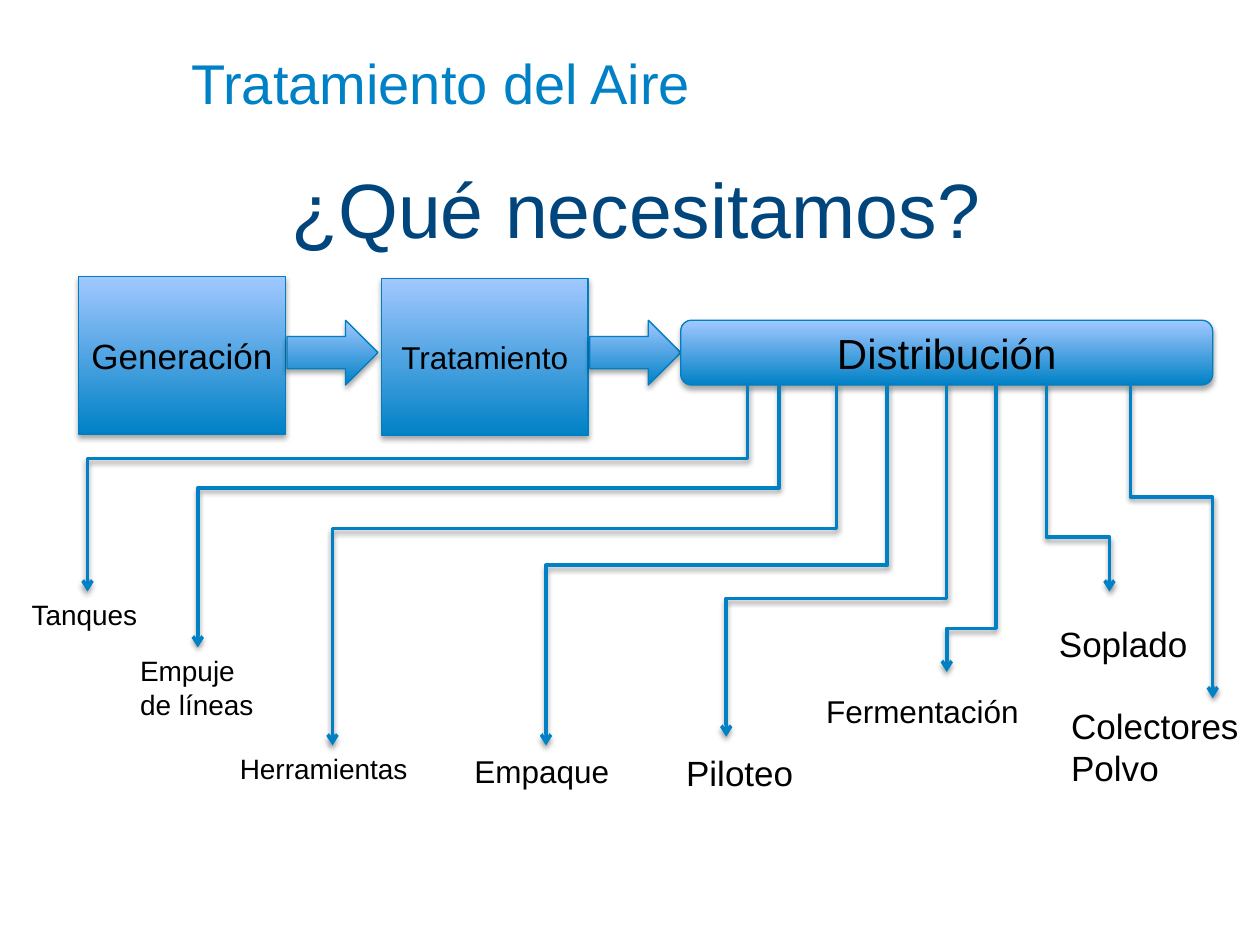
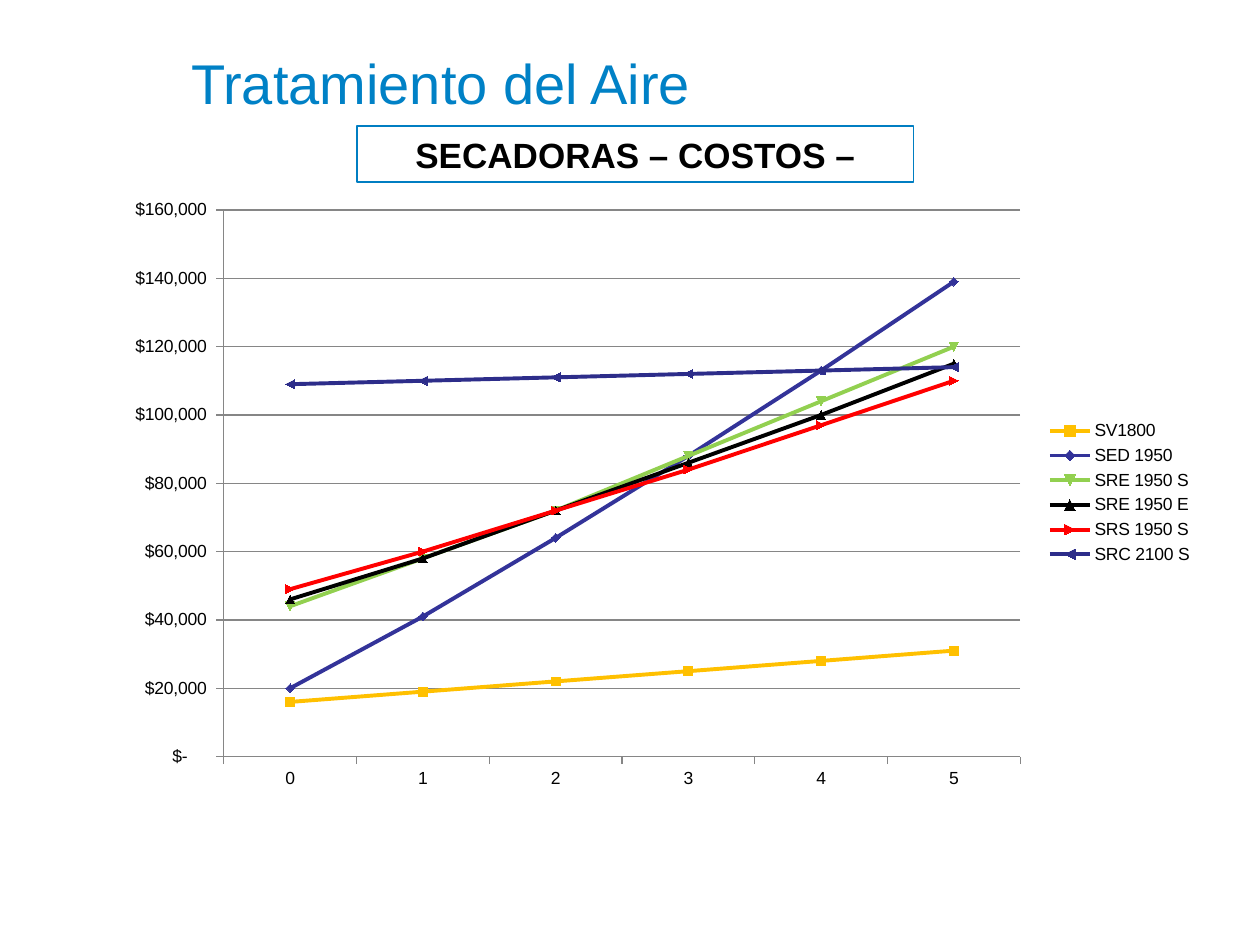
from lxml.etree import SubElement
from pptx import Presentation
from pptx.chart.data import CategoryChartData
from pptx.dml.color import RGBColor
from pptx.enum.chart import XL_CHART_TYPE, XL_LEGEND_POSITION, XL_MARKER_STYLE, XL_TICK_MARK
from pptx.enum.shapes import MSO_CONNECTOR, MSO_SHAPE
from pptx.enum.text import MSO_ANCHOR, PP_ALIGN
from pptx.oxml.ns import qn
from pptx.util import Pt

FONT = "Arial"
BLUE, EDGE, LIGHT, NAVY = "0081C6", "007EC2", "A2C8FF", "00457C"
BLACK, WHITE, GRAY = "000000", "FFFFFF", "868686"
TITLE = "Tratamiento del Aire"
MONEY = '_("$"* #,##0_);_("$"* \\(#,##0\\);_("$"* "-"??_);_(@_)'

# Each outlet: label, size, label box (x, y, width), pipe (start x, bend y, end x, end y)
OUTLETS = [
    ("Tanques", 16, (11, 118, 79), (427, 42, 50, 118)),
    ("Empuje de líneas", 16, (73, 150, 79), (445, 59, 113, 150)),
    ("Herramientas", 16, (130, 206, 122), (478, 82, 190, 206)),
    ("Empaque", 18, (264, 206, 96), (507, 103, 312, 206)),
    ("Piloteo", 20, (385, 206, 102), (541, 122, 415, 201)),
    ("Fermentación", 18, (465, 172, 133), (569, 139, 541, 164)),
    ("Soplado", 20, (598, 132, 120), (598, 87, 634, 118)),
    ("Colectores Polvo", 20, (605, 179, 114), (646, 64, 693, 179)),
]
COSTS = [
    ("SV1800", "FFC000", (16, 19, 22, 25, 28, 31)),
    ("SED 1950", "333399", (20, 41, 64, 88, 113, 139)),
    ("SRE 1950 S", "92D050", (44, 58, 72, 88, 104, 120)),
    ("SRE 1950 E", BLACK, (46, 58, 72, 86, 100, 115)),
    ("SRS 1950 S", "FF0000", (49, 60, 72, 84, 97, 110)),
    ("SRC 2100 S", "2D2D8A", (109, 110, 111, 112, 113, 114)),
]


def rgb(code):
    """Turn a hex string into a colour."""
    return RGBColor.from_string(code)


def points(*sizes):
    """Turn numbers into lengths in points."""
    return [Pt(size) for size in sizes]


def write(frame, text, size, color=BLACK, align=PP_ALIGN.LEFT, bold=False):
    """Put one formatted paragraph in a text frame."""
    frame.text = text
    frame.word_wrap = True
    para = frame.paragraphs[0]
    para.alignment = align
    font = para.runs[0].font
    font.name, font.size, font.bold = FONT, Pt(size), bold
    font.color.rgb = rgb(color)


def label(slide, box, text, size, **style):
    """Add a text box."""
    frame = slide.shapes.add_textbox(*points(*box)).text_frame
    frame.margin_right = 0
    write(frame, text, size, **style)


def shade(effects, alpha):
    """Add a soft shadow that falls straight down."""
    drop = SubElement(effects, qn("a:outerShdw"), blurRad=str(Pt(3.1)), dist=str(Pt(1.8)),
                      dir="5400000", rotWithShape="0")
    color = SubElement(drop, qn("a:srgbClr"), val=BLACK)
    SubElement(color, qn("a:alpha"), val=str(alpha * 1000))


def block(slide, kind, box, text="", size=18):
    """Add a shaded blue shape with an optional caption."""
    shape = slide.shapes.add_shape(kind, *points(*box))
    shape.fill.gradient()
    shape.fill.gradient_angle = 90
    for stop, color in zip(shape.fill.gradient_stops, (BLUE, LIGHT)):
        stop.color.rgb = rgb(color)
    shape.line.color.rgb = rgb(EDGE)
    shape.line.width = Pt(0.75)
    shape.shadow.inherit = False
    shade(shape._element.spPr.find(qn("a:effectLst")), 35)
    if text:
        frame = shape.text_frame
        frame.margin_left = frame.margin_right = 0
        write(frame, text, size, align=PP_ALIGN.CENTER)


def pipe(slide, start, bend, end):
    """Add an elbow arrow that leaves and arrives vertically."""
    (x1, y1), (x2, y2) = start, end
    tall, wide = y2 - y1, abs(x2 - x1)
    mid_x, mid_y = (x1 + x2) / 2, (y1 + y2) / 2
    side = 1 if x2 < x1 else -1
    line = slide.shapes.add_connector(
        MSO_CONNECTOR.ELBOW,
        *points(mid_x - side * tall / 2, mid_y - wide / 2,
                mid_x + side * tall / 2, mid_y + wide / 2))
    line.line.color.rgb = rgb(BLUE)
    line.line.width = Pt(2)
    props = line._element.spPr
    props.find(qn("a:xfrm")).set("rot", "5400000" if side > 0 else "16200000")
    guides = props.find(qn("a:prstGeom")).find(qn("a:avLst"))
    ratio = round((bend - y1) / tall * 100000)
    SubElement(guides, qn("a:gd"), name="adj1", fmla=f"val {ratio}")
    SubElement(props.find(qn("a:ln")), qn("a:tailEnd"), type="arrow")
    shade(SubElement(props, qn("a:effectLst")), 38)


def flow(slide, left, top):
    """Draw the chain from generation to distribution."""
    block(slide, MSO_SHAPE.RECTANGLE, (left, top, 118, 90), "Generación", 20)
    block(slide, MSO_SHAPE.RIGHT_ARROW, (left + 119, top + 25, 52, 37))
    block(slide, MSO_SHAPE.RECTANGLE, (left + 173, top + 1, 118, 90), "Tratamiento", 18)
    block(slide, MSO_SHAPE.RIGHT_ARROW, (left + 292, top + 25, 52, 37))
    block(slide, MSO_SHAPE.ROUNDED_RECTANGLE, (left + 344, top + 25, 304, 37),
          "Distribución", 24)


def net(slide, left, top):
    """Draw the pipes below the distribution bar and their outlets."""
    for text, size, (x, y, width), (x1, bend, x2, y2) in OUTLETS:
        label(slide, (left + x, top + y, width, 29), text, size)
        pipe(slide, (left + x1, top), top + bend, (left + x2, top + y2))


def place(chart, x, y, wide, high):
    """Fix the inner plot area, in fractions of the chart."""
    area = chart._chartSpace.chart.plotArea
    layout = area.find(qn("c:layout"))
    if layout is None:
        layout = SubElement(area, qn("c:layout"))
        area.insert(0, layout)
    manual = SubElement(layout, qn("c:manualLayout"))
    parts = dict(layoutTarget="inner", xMode="edge", yMode="edge", x=x, y=y, w=wide, h=high)
    for name, value in parts.items():
        SubElement(manual, qn("c:" + name), val=str(value))


def graph(slide, box):
    """Draw the cost lines by year."""
    data = CategoryChartData(number_format=MONEY)
    data.categories = [str(year) for year in range(6)]
    for name, _, costs in COSTS:
        data.add_series(name, [cost * 1000 for cost in costs])
    chart = slide.shapes.add_chart(XL_CHART_TYPE.LINE_MARKERS, *points(*box), data).chart
    chart.has_title = False
    chart.font.name, chart.font.size = FONT, Pt(10)
    chart.font.color.rgb = rgb(BLACK)
    chart.has_legend = True
    chart.legend.position = XL_LEGEND_POSITION.RIGHT
    chart.legend.include_in_layout = False
    plot = chart.plots[0]
    plot.vary_by_categories = False
    for series, (_, color, _) in zip(plot.series, COSTS):
        series.smooth = False
        series.format.line.color.rgb = rgb(color)
        series.format.line.width = Pt(2.25)
        mark = series.marker
        mark.style, mark.size = XL_MARKER_STYLE.AUTOMATIC, 5
        mark.format.fill.solid()
        mark.format.fill.fore_color.rgb = rgb(color)
        mark.format.line.color.rgb = rgb(color)
    axis = chart.value_axis
    axis.minimum_scale, axis.maximum_scale, axis.major_unit = 0, 160000, 20000
    axis.has_major_gridlines = True
    axis.tick_labels.number_format = MONEY
    axis.tick_labels.number_format_is_linked = False
    for part in (axis, chart.category_axis, axis.major_gridlines):
        part.format.line.color.rgb = rgb(GRAY)
        part.format.line.width = Pt(0.75)
    for part in (axis, chart.category_axis):
        part.major_tick_mark = XL_TICK_MARK.OUTSIDE
    place(chart, 0.1, 0.04, 0.73, 0.89)


def banner(slide, box):
    """Draw the framed chart heading."""
    shape = slide.shapes.add_shape(MSO_SHAPE.RECTANGLE, *points(*box))
    shape.shadow.inherit = False
    shape.fill.solid()
    shape.fill.fore_color.rgb = rgb(WHITE)
    shape.line.color.rgb = rgb(EDGE)
    shape.line.width = Pt(0.75)
    write(shape.text_frame, "SECADORAS – COSTOS –", 20, align=PP_ALIGN.CENTER, bold=True)


def start(deck):
    """Add a slide with the shared title."""
    slide = deck.slides.add_slide(deck.slide_layouts[5])
    title = slide.shapes.title
    title.left, title.top, title.width, title.height = points(102, 24, 582, 90)
    write(title.text_frame, TITLE, 32, BLUE)
    title.text_frame.vertical_anchor = MSO_ANCHOR.TOP
    return slide


def needs(deck):
    """Build the slide on what the air system needs."""
    slide = start(deck)
    label(slide, (36, 89, 648, 64), "¿Qué necesitamos?", 44,
          color=NAVY, align=PP_ALIGN.CENTER)
    flow(slide, 45, 158)
    net(slide, 0, 220)


def costs(deck):
    """Build the slide that compares dryer costs."""
    slide = start(deck)
    banner(slide, (204, 72, 318, 32))
    graph(slide, (65.5, 106, 623.5, 351))


def main():
    """Build and save the deck."""
    deck = Presentation()
    deck.slide_width, deck.slide_height = points(720, 540)
    needs(deck)
    costs(deck)
    deck.save("out.pptx")


if __name__ == "__main__":
    main()
